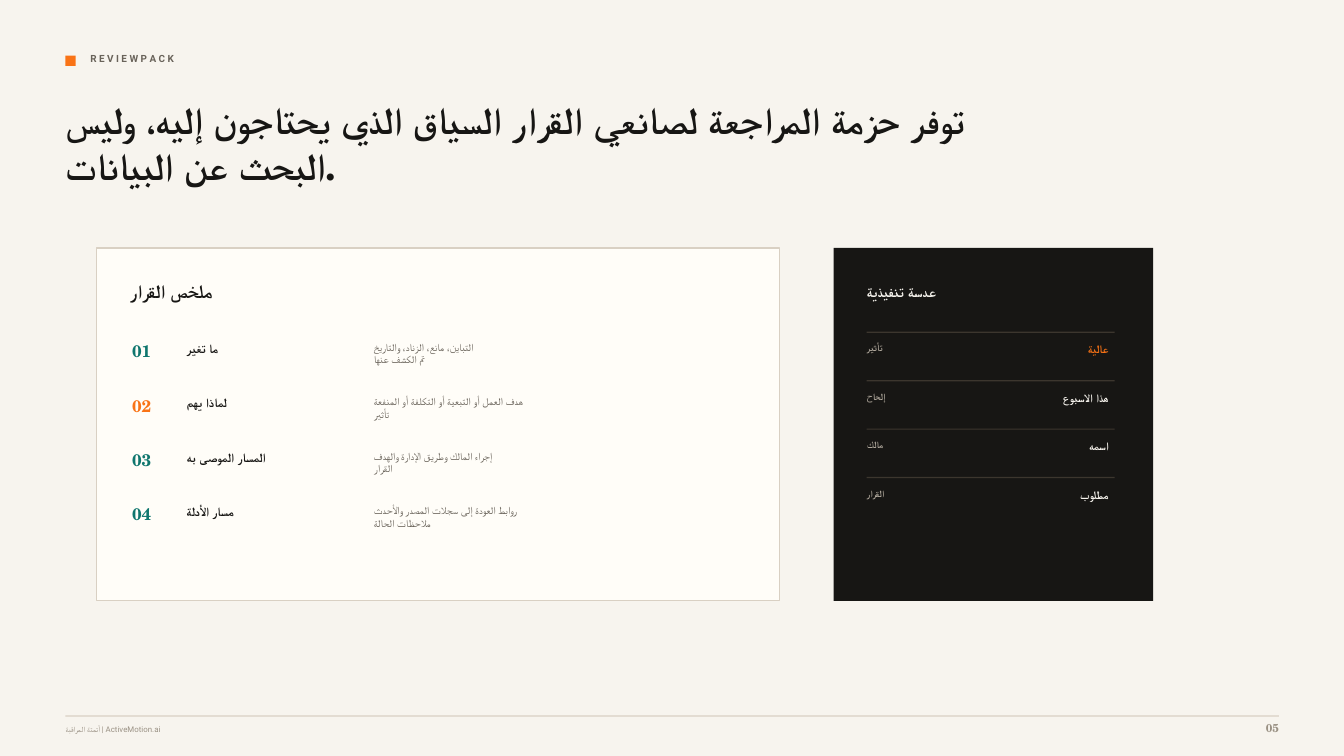
import pptx
import pptx.dml.color
import pptx.enum.shapes
import pptx.enum.text
import pptx.util

Cm = pptx.util.Cm
Pt = pptx.util.Pt
ALIGN = pptx.enum.text.PP_ALIGN

SANS = "Roboto"
SERIF = "TeX Gyre Schola"
COLORS = {
    "paper": "F7F4EE",
    "card": "FFFDF8",
    "ink": "171614",
    "orange": "F97316",
    "teal": "0F766E",
    "body": "69635A",
    "border": "D9D0C3",
    "lens_rule": "3C362E",
    "lens_label": "AFA79B",
    "footer": "9A9184",
}

DECISION_ROWS = [
    ("ما تغير", "التباين، مانع، الزناد، والتاريخ\nتم الكشف عنها", "teal"),
    ("لماذا يهم", "هدف العمل أو التبعية أو التكلفة أو المنفعة\nتأثير", "orange"),
    ("المسار الموصى به", "إجراء المالك وطريق الإدارة والهدف\nالقرار", "teal"),
    ("مسار الأدلة", "روابط العودة إلى سجلات المصدر والأحدث\nملاحظات الحالة", "teal"),
]
LENS_ROWS = [
    ("تأثير", "عالية", "orange"),
    ("إلحاح", "هذا الاسبوع", "paper"),
    ("مالك", "اسمه", "paper"),
    ("القرار", "مطلوب", "paper"),
]

MARGIN = 1.65
CARD_TOP, CARD_HEIGHT = 6.25, 8.89
DECISION_TOP, DECISION_PITCH = 8.59, 1.37
LENS_LEFT, LENS_TOP, LENS_PITCH = 21.84, 8.36, 1.22


def rgb(name):
    return pptx.dml.color.RGBColor.from_string(COLORS[name])


def add_block(slide, left, top, width, height, fill, border=None):
    block = slide.shapes.add_shape(
        pptx.enum.shapes.MSO_SHAPE.RECTANGLE,
        Cm(left), Cm(top), Cm(width), Cm(height))
    block.shadow.inherit = False
    block.fill.solid()
    block.fill.fore_color.rgb = rgb(fill)
    if border:
        block.line.color.rgb = rgb(border)
        block.line.width = Pt(0.75)
    else:
        block.line.fill.background()


def add_rule(slide, left, top, width, color):
    add_block(slide, left, top, width, 0.03, color)


def add_text(slide, left, top, width, height, text, size, color,
             font=SANS, bold=True, align=None):
    """Add a text box without insets; each line of text is a paragraph."""
    box = slide.shapes.add_textbox(Cm(left), Cm(top), Cm(width), Cm(height))
    frame = box.text_frame
    frame.word_wrap = True
    frame.margin_left = frame.margin_right = 0
    frame.margin_top = frame.margin_bottom = 0
    frame.text = text
    for paragraph in frame.paragraphs:
        paragraph.alignment = align
        for run in paragraph.runs:
            run.font.name = font
            run.font.size = Pt(size)
            run.font.bold = bold
            run.font.color.rgb = rgb(color)


def add_header(slide):
    add_block(slide, MARGIN, 1.4, 0.26, 0.26, "orange")
    add_text(slide, 2.28, 1.32, 13.77, 0.48, "R E V I E W P A C K", 7.1, "body")
    add_text(slide, MARGIN, 2.44, 24.08, 2.59,
             "توفر حزمة المراجعة لصانعي القرار السياق الذي يحتاجون إليه، "
             "وليس البحث عن البيانات.", 27, "ink", SERIF)


def add_decision_card(slide):
    add_block(slide, 2.44, CARD_TOP, 17.2, CARD_HEIGHT, "card", "border")
    add_text(slide, 3.28, 7.04, 6.88, 0.64, "ملخص القرار", 13.5, "ink")
    for index, (heading, detail, accent) in enumerate(DECISION_ROWS):
        top = DECISION_TOP + index * DECISION_PITCH
        add_text(slide, 3.33, top, 0.89, 0.64, f"{index + 1:02}", 12, accent, SERIF)
        add_text(slide, 4.7, top, 4.39, 0.48, heading, 9, "ink")
        add_text(slide, 9.42, top, 7.92, 0.79, detail, 7.5, "body", bold=False)


def add_lens_card(slide):
    add_block(slide, 21.01, CARD_TOP, 8.05, CARD_HEIGHT, "ink")
    add_text(slide, LENS_LEFT, 7.14, 4.78, 0.53, "عدسة تنفيذية", 10.5, "paper")
    for index, (label, value, color) in enumerate(LENS_ROWS):
        top = LENS_TOP + index * LENS_PITCH
        add_rule(slide, LENS_LEFT, top, 6.25, "lens_rule")
        add_text(slide, LENS_LEFT, top + 0.27, 2.44, 0.43, label, 6.8, "lens_label")
        add_text(slide, 25.02, top + 0.27, 2.92, 0.43, value, 8.2, color,
                 align=ALIGN.RIGHT)


def add_footer(slide):
    add_rule(slide, MARGIN, 18.03, 30.58, "border")
    add_text(slide, MARGIN, 18.26, 20.12, 0.38,
             "أتمتة المراقبة | ActiveMotion.ai", 5.6, "footer", bold=False)
    add_text(slide, 30.96, 18.16, 1.27, 0.48, "05", 8.2, "footer", SERIF,
             align=ALIGN.RIGHT)


def main():
    deck = pptx.Presentation()
    deck.slide_width, deck.slide_height = Cm(33.87), Cm(19.05)
    slide = deck.slides.add_slide(deck.slide_layouts[6])
    add_block(slide, 0, 0, 33.87, 19.05, "paper")
    add_header(slide)
    add_decision_card(slide)
    add_lens_card(slide)
    add_footer(slide)
    deck.save("out.pptx")


if __name__ == "__main__":
    main()
